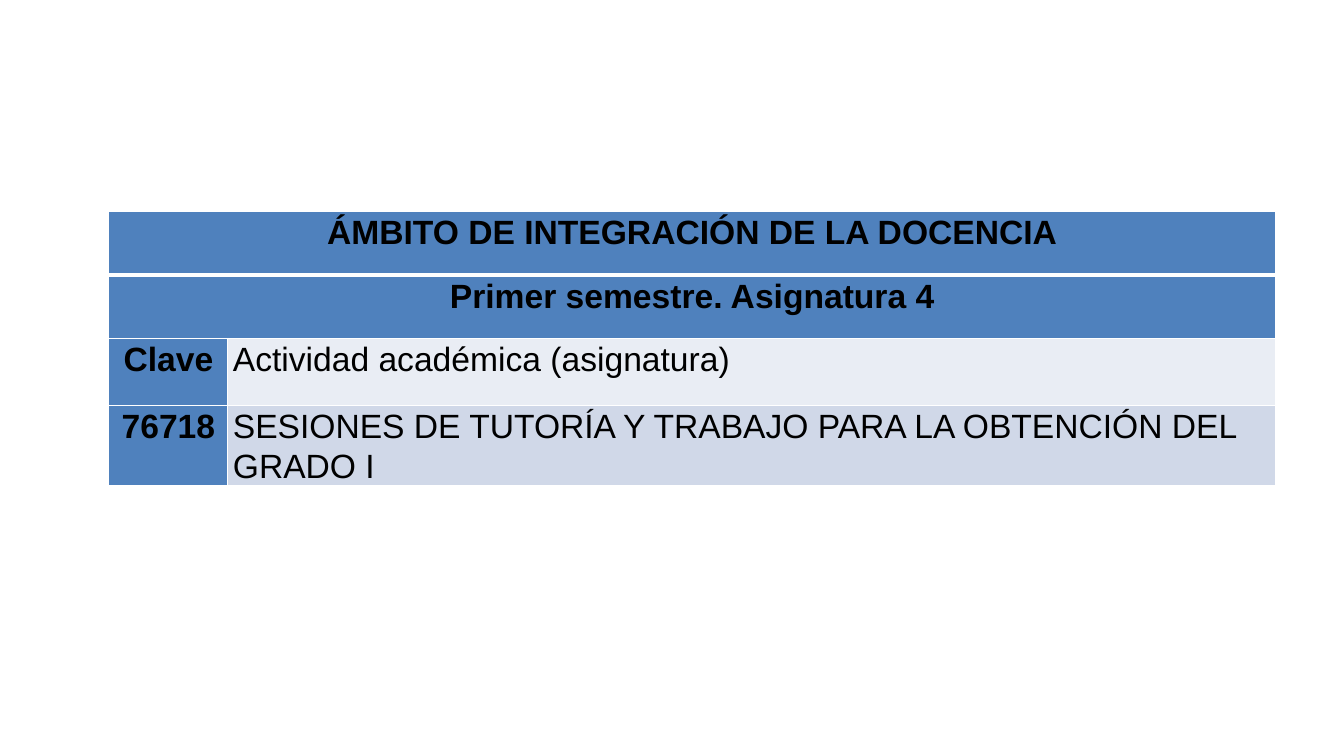
from lxml.etree import SubElement
from pptx import Presentation
from pptx.dml.color import RGBColor as Color
from pptx.enum.text import MSO_ANCHOR as Anchor, PP_ALIGN as Align
from pptx.oxml.ns import qn
from pptx.util import Inches, Pt

COLORS = {"head": "4F81BD", "light": "E9EDF4", "band": "D0D8E8",
          "line": "FFFFFF", "text": "000000"}
SLIDE_SIZE = (13.33, 7.5)
TABLE_PLACE = (1.08, 2.1)
COLUMNS = (1.18, 10.39)
ROWS = (0.63, 0.63, 0.66, 0.66)
CELL_FORMAT = {"margin_left": Inches(0.05), "margin_right": Inches(0.05),
               "margin_top": 0, "margin_bottom": 0,
               "vertical_anchor": Anchor.TOP}
PARA_FORMAT = {"line_spacing": 1.07, "space_before": Pt(0), "space_after": Pt(8)}
FONT_FORMAT = {"name": "Arial", "size": Pt(24)}

BANNERS = ("ÁMBITO DE INTEGRACIÓN DE LA DOCENCIA", "Primer semestre. Asignatura 4")
SUBJECTS = (
    ("Clave", "Actividad académica (asignatura)", "light"),
    ("76718", "SESIONES DE TUTORÍA Y TRABAJO PARA LA OBTENCIÓN DEL GRADO I", "band"),
)


def set_format(target, values):
    for name, value in values.items():
        setattr(target, name, value)


def add_borders(cell, **widths):
    """Draw the four edges, 1 pt unless a width is given; call before filling."""
    properties = cell._tc.get_or_add_tcPr()
    for edge in "LRTB":
        line = SubElement(properties, qn(f"a:ln{edge}"), w=str(Pt(widths.get(edge, 1))))
        fill = SubElement(line, qn("a:solidFill"))
        SubElement(fill, qn("a:srgbClr"), val=COLORS["line"])


def fill_cell(cell, text, color, is_heading=True):
    set_format(cell, CELL_FORMAT)
    cell.fill.solid()
    cell.fill.fore_color.rgb = Color.from_string(COLORS[color])
    para = cell.text_frame.paragraphs[0]
    set_format(para, PARA_FORMAT)
    para.alignment = Align.CENTER if is_heading else Align.LEFT
    span = para.add_run()
    span.text = text
    set_format(span.font, {**FONT_FORMAT, "bold": is_heading})
    span.font.color.rgb = Color.from_string(COLORS["text"])


def add_grid(page):
    place = map(Inches, (*TABLE_PLACE, sum(COLUMNS), sum(ROWS)))
    table = page.shapes.add_table(len(ROWS), len(COLUMNS), *place).table
    table.horz_banding = False
    for column, width in zip(table.columns, COLUMNS):
        column.width = Inches(width)
    for index, (row, height) in enumerate(zip(table.rows, ROWS)):
        row.height = Inches(height)
        for cell in row.cells:
            add_borders(cell, T=3 if index == 1 else 1, B=3 if index == 0 else 1)
    return table


def main():
    deck = Presentation()
    deck.slide_width, deck.slide_height = map(Inches, SLIDE_SIZE)
    page = deck.slides.add_slide(deck.slide_layouts[6])
    table = add_grid(page)
    for row, banner in enumerate(BANNERS):
        table.cell(row, 0).merge(table.cell(row, 1))
        fill_cell(table.cell(row, 0), banner, "head")
    for row, (key, subject, color) in enumerate(SUBJECTS, len(BANNERS)):
        fill_cell(table.cell(row, 0), key, "head")
        fill_cell(table.cell(row, 1), subject, color, is_heading=False)
    deck.save("out.pptx")


if __name__ == "__main__":
    main()
